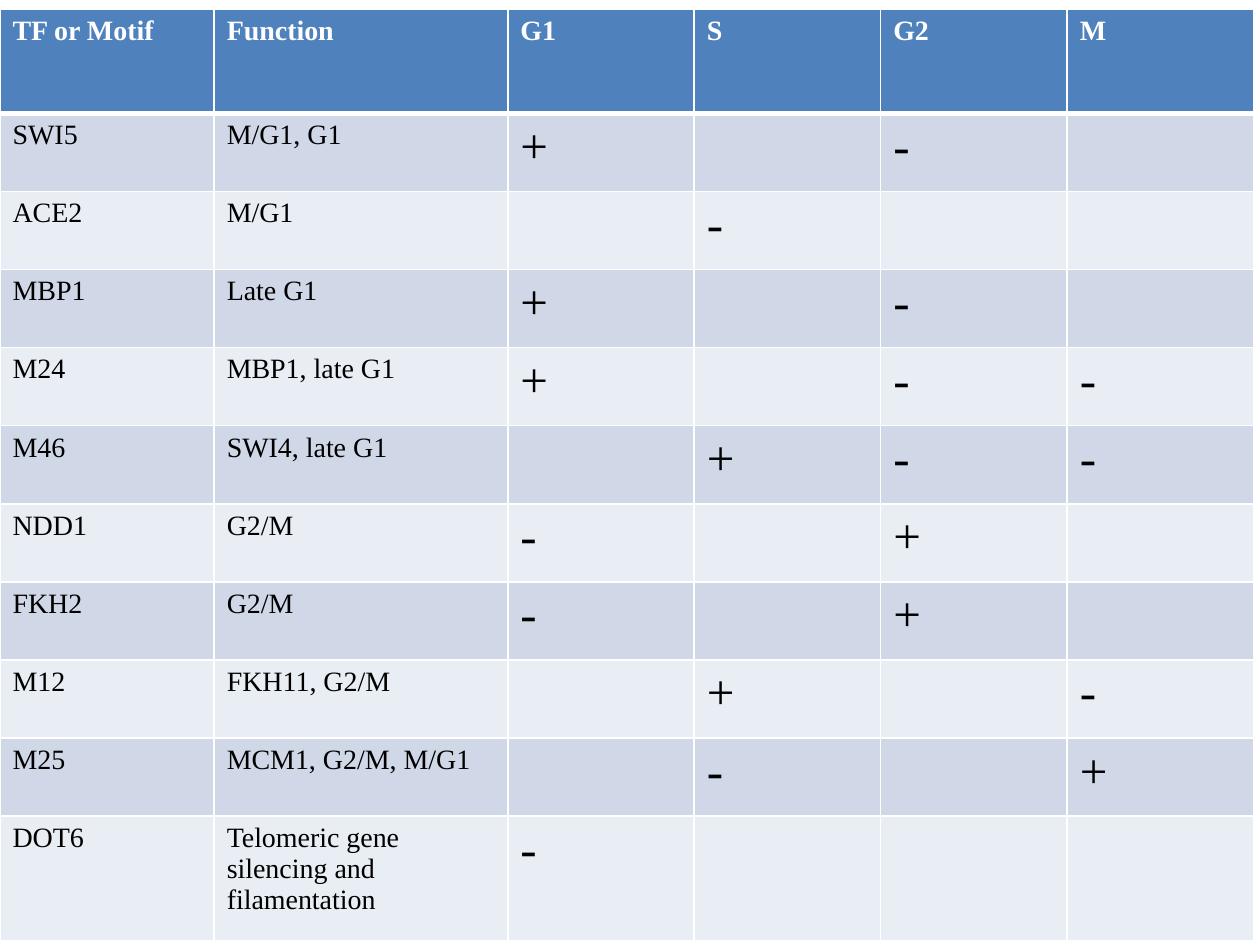
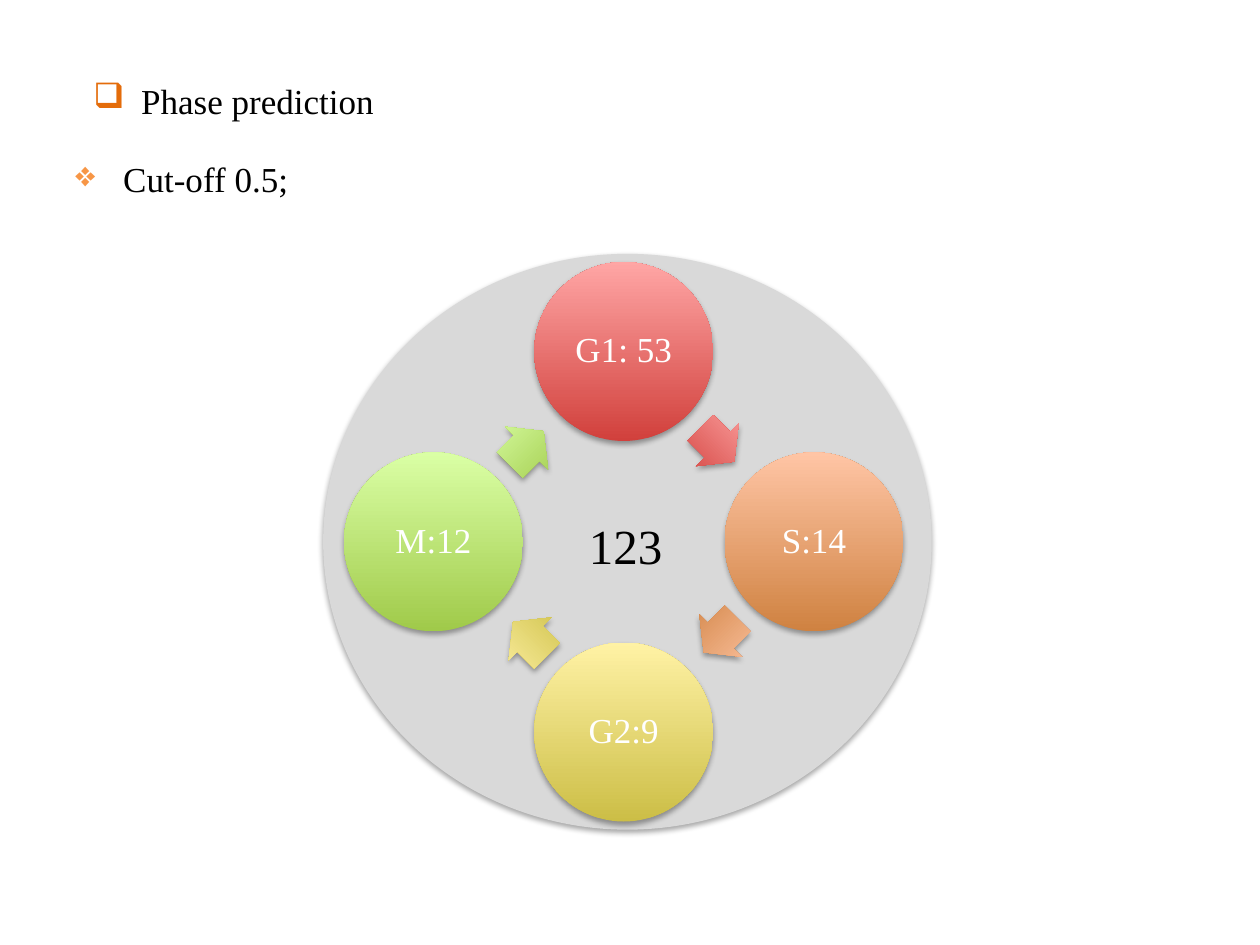
"""Build two slides on cell-cycle factors: a motif table and a phase prediction cycle."""
from dataclasses import dataclass
from math import cos, radians, sin

from pptx import Presentation
from pptx.dml.color import RGBColor
from pptx.enum.shapes import MSO_SHAPE as Geo
from pptx.enum.text import MSO_ANCHOR as Anchor, MSO_AUTO_SIZE as AutoSize, PP_ALIGN as Align
from pptx.oxml.ns import qn
from pptx.util import Inches, Pt
from lxml.etree import SubElement

FONT = "Times New Roman"
WHITE = RGBColor(0xFF, 0xFF, 0xFF)
BLACK = RGBColor(0x00, 0x00, 0x00)
HEADER_BLUE = RGBColor(0x4F, 0x81, 0xBD)
BANDS = (RGBColor(0xD0, 0xD8, 0xE8), RGBColor(0xE9, 0xED, 0xF4))
DISC_GREY = RGBColor(0xD9, 0xD9, 0xD9)
TITLE_BULLET = RGBColor(0xE4, 0x6C, 0x0A)
ITEM_BULLET = RGBColor(0xF7, 0x96, 0x46)

COL_WIDTHS = (1.7, 2.33, 1.48, 1.48, 1.48, 1.48)
ROW_HEIGHTS = (0.83, *[0.62] * 9, 0.99)
PHASES = ("G1", "S", "G2", "M")

CENTER_X, CENTER_Y = 4.95, 4.3
RING, DISC = 1.51, 1.42
ARROW_RING, ARROW_W, ARROW_H = 1.07, 0.38, 0.48


@dataclass(frozen=True)
class Factor:
    """A transcription factor or motif and its sign in each phase."""
    name: str
    function: str
    signs: dict[str, str]


@dataclass(frozen=True)
class Phase:
    """A phase of the cycle with its gradient colours."""
    label: str
    dark: RGBColor
    light: RGBColor


FACTORS = (
    Factor("SWI5", "M/G1, G1", {"G1": "+", "G2": "-"}),
    Factor("ACE2", "M/G1", {"S": "-"}),
    Factor("MBP1", "Late G1", {"G1": "+", "G2": "-"}),
    Factor("M24", "MBP1, late G1", {"G1": "+", "G2": "-", "M": "-"}),
    Factor("M46", "SWI4, late G1", {"S": "+", "G2": "-", "M": "-"}),
    Factor("NDD1", "G2/M", {"G1": "-", "G2": "+"}),
    Factor("FKH2", "G2/M", {"G1": "-", "G2": "+"}),
    Factor("M12", "FKH11, G2/M", {"S": "+", "M": "-"}),
    Factor("M25", "MCM1, G2/M, M/G1", {"S": "-", "M": "+"}),
    Factor("DOT6", "Telomeric gene silencing and filamentation", {"G1": "-"}),
)
CYCLE = (
    Phase("G1: 53", RGBColor(0xD1, 0x40, 0x3C), RGBColor(0xFF, 0xA6, 0xA5)),
    Phase("S:14", RGBColor(0xCF, 0x82, 0x41), RGBColor(0xFF, 0xC5, 0xA5)),
    Phase("G2:9", RGBColor(0xCC, 0xBE, 0x46), RGBColor(0xFF, 0xF2, 0xA5)),
    Phase("M:12", RGBColor(0xA0, 0xCA, 0x4A), RGBColor(0xDA, 0xFF, 0xA5)),
)


def write(tf, text: str, size: float, color: RGBColor = BLACK, bold: bool = False,
          align: Align = Align.LEFT):
    """Write one paragraph in the deck font and return it."""
    p = tf.paragraphs[0]
    p.text = text
    p.alignment = align
    p.font.name, p.font.size, p.font.bold = FONT, Pt(size), bold
    p.font.color.rgb = color
    return p


def add_bullet(p, char: str, color: RGBColor) -> None:
    """Give a paragraph a coloured bullet with a hanging indent."""
    pPr = p._p.get_or_add_pPr()
    pPr.set("marL", str(Inches(0.38)))
    pPr.set("indent", str(-Inches(0.38)))
    clr = pPr.makeelement(qn("a:buClr"))
    SubElement(clr, qn("a:srgbClr"), val=str(color))
    pPr.insert(0, clr)
    clr.addnext(pPr.makeelement(qn("a:buChar"), {"char": char}))


def set_borders(cell, **widths: float) -> None:
    """Draw white borders on a cell, 1 pt unless a side is given."""
    tcPr = cell._tc.get_or_add_tcPr()
    for i, side in enumerate("LRTB"):
        ln = tcPr.makeelement(qn(f"a:ln{side}"), {"w": str(Pt(widths.get(side, 1)))})
        SubElement(SubElement(ln, qn("a:solidFill")), qn("a:srgbClr"), val=str(WHITE))
        tcPr.insert(i, ln)


def add_shadow(sp) -> None:
    """Put a soft shadow below a shape."""
    sp.shadow.inherit = False
    effects = sp._element.spPr.find(qn("a:effectLst"))
    shadow = SubElement(effects, qn("a:outerShdw"), blurRad=str(Pt(3.1)), dist=str(Pt(1.8)),
                        dir="5400000", rotWithShape="0")
    clr = SubElement(shadow, qn("a:srgbClr"), val=str(BLACK))
    SubElement(clr, qn("a:alpha"), val="35000")


def add_centered(s, geo: Geo, cx: float, cy: float, w: float, h: float):
    """Add a shadowed shape without outline around a centre point."""
    sp = s.shapes.add_shape(geo, Inches(cx - w / 2), Inches(cy - h / 2), Inches(w), Inches(h))
    sp.line.fill.background()
    add_shadow(sp)
    return sp


def fill_gradient(sp, phase: Phase) -> None:
    """Fill a shape from dark at the bottom to light at the top."""
    sp.fill.gradient()
    sp.fill.gradient_angle = 90
    for stop, color in zip(sp.fill.gradient_stops, (phase.dark, phase.light)):
        stop.color.rgb = color


def add_phase(s, phase: Phase, turn: float) -> None:
    """Add a phase disc and the arrow that leads to the next one."""
    a = radians(turn - 90)
    disc = add_centered(s, Geo.OVAL, CENTER_X + RING * cos(a), CENTER_Y + RING * sin(a),
                        DISC, DISC)
    fill_gradient(disc, phase)
    tf = disc.text_frame
    tf.margin_left = tf.margin_right = tf.margin_top = tf.margin_bottom = Inches(0.03)
    tf.vertical_anchor = Anchor.MIDDLE
    write(tf, phase.label, 20, WHITE, align=Align.CENTER).line_spacing = 0.9

    a = radians(turn - 46)
    arrow = add_centered(s, Geo.RIGHT_ARROW, CENTER_X + ARROW_RING * cos(a),
                         CENTER_Y + ARROW_RING * sin(a), ARROW_W, ARROW_H)
    arrow.adjustments[0], arrow.adjustments[1] = 0.6, 0.5
    arrow.rotation = turn + 45
    fill_gradient(arrow, phase)


def build_motif_slide(prs) -> None:
    """Add the table of factors and phases."""
    s = prs.slides.add_slide(prs.slide_layouts[6])
    rows = [("TF or Motif", "Function", *PHASES)]
    rows += [(f.name, f.function, *(f.signs.get(ph, "") for ph in PHASES)) for f in FACTORS]
    table = s.shapes.add_table(len(rows), len(COL_WIDTHS), 0, Inches(0.07),
                               Inches(sum(COL_WIDTHS)), Inches(sum(ROW_HEIGHTS))).table
    for col, width in zip(table.columns, COL_WIDTHS):
        col.width = Inches(width)
    for i, (row, height, texts) in enumerate(zip(table.rows, ROW_HEIGHTS, rows)):
        row.height = Inches(height)
        header = i == 0
        for cell, text in zip(row.cells, texts):
            cell.fill.solid()
            cell.fill.fore_color.rgb = HEADER_BLUE if header else BANDS[(i - 1) % 2]
            set_borders(cell, T=3 if i == 1 else 1, B=3 if header else 1)
            if text:
                write(cell.text_frame, text, 28 if text in "+-" else 16,
                      WHITE if header else BLACK, header)


def build_prediction_slide(prs) -> None:
    """Add the cycle of predicted phases."""
    s = prs.slides.add_slide(prs.slide_layouts[5])
    title = s.shapes.title
    title.left, title.top = Inches(0.64), Inches(0.58)
    title.width, title.height = Inches(2.43), Inches(0.44)
    tf = title.text_frame
    tf.word_wrap, tf.auto_size = False, AutoSize.SHAPE_TO_FIT_TEXT
    tf.vertical_anchor = Anchor.TOP
    add_bullet(write(tf, "Phase prediction", 20), "❑", TITLE_BULLET)

    tb = s.shapes.add_textbox(Inches(0.5), Inches(1.2), Inches(9), Inches(4.95))
    tb.text_frame.word_wrap = True
    add_bullet(write(tb.text_frame, "Cut-off 0.5;", 20), "❖", ITEM_BULLET)

    back = add_centered(s, Geo.OVAL, 4.98, 4.3, 4.83, 4.57)
    back.fill.solid()
    back.fill.fore_color.rgb = DISC_GREY
    for i, phase in enumerate(CYCLE):
        add_phase(s, phase, i * 360 / len(CYCLE))

    total = s.shapes.add_textbox(Inches(4.57), Inches(4.04), Inches(0.79), Inches(0.57))
    total.text_frame.word_wrap = False
    total.text_frame.auto_size = AutoSize.SHAPE_TO_FIT_TEXT
    write(total.text_frame, "123", 28, align=Align.CENTER)


def main() -> None:
    """Build and save the deck."""
    prs = Presentation()
    prs.slide_width, prs.slide_height = Inches(10), Inches(7.5)
    build_motif_slide(prs)
    build_prediction_slide(prs)
    prs.save("out.pptx")


if __name__ == "__main__":
    main()
